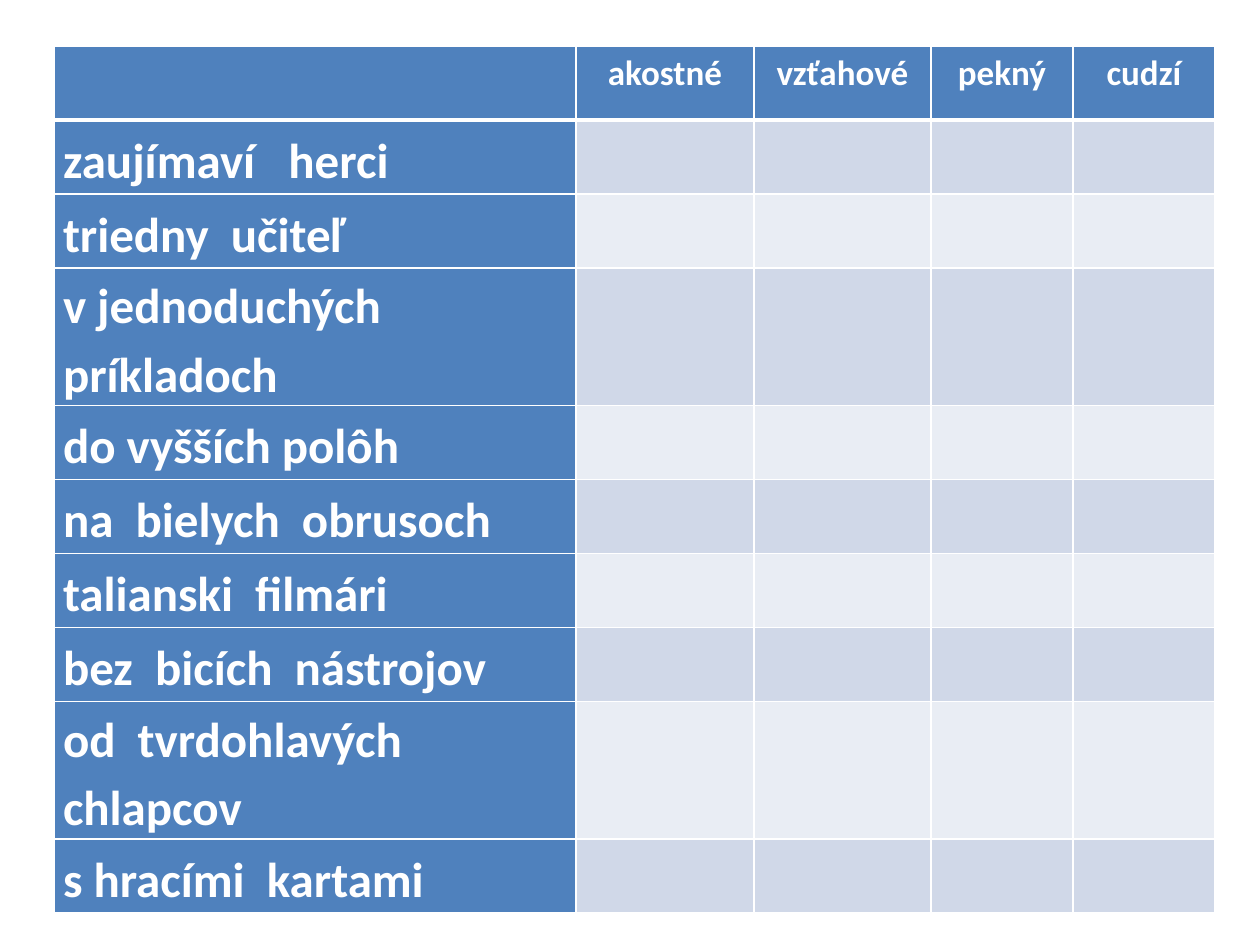
from lxml import etree
from pptx import Presentation
from pptx import util as u
from pptx.dml.color import RGBColor
from pptx.enum import text
from pptx.oxml.ns import qn

PX = 914400 // 126
LEFT, TOP = 54, 46
COLUMN_WIDTHS = [522, 178, 177, 142, 142]
ROW_HEIGHT, TALL_ROW_HEIGHT = 74, 135
SIDE_MARGIN = 9

WHITE, BLUE = "FFFFFF", "4F81BD"
BANDS = ["D0D8E8", "E9EDF4"]
FONT = "Calibri"

CATEGORIES = ["akostné", "vzťahové", "pekný", "cudzí"]
PHRASES = [
    "zaujímaví   herci",
    "triedny  učiteľ",
    "v jednoduchých  príkladoch",
    "do vyšších polôh",
    "na  bielych  obrusoch",
    "talianski  filmári",
    "bez  bicích  nástrojov",
    "od  tvrdohlavých  chlapcov",
    "s hracími  kartami",
]
TWO_LINE_PHRASES = {PHRASES[2], PHRASES[7]}


def px(n):
    return u.Emu(n * PX)


def rgb(color):
    return RGBColor.from_string(color)


def set_borders(cell, top=1, bottom=1):
    """Draw white borders, with widths in points; call before the fill is set."""
    tc_pr = cell._tc.get_or_add_tcPr()
    for side, width in (("L", 1), ("R", 1), ("T", top), ("B", bottom)):
        ln = etree.SubElement(tc_pr, qn(f"a:ln{side}"), w=str(u.Pt(width)))
        fill = etree.SubElement(ln, qn("a:solidFill"))
        etree.SubElement(fill, qn("a:srgbClr"), val=WHITE)


def fill_cell(cell, color):
    cell.fill.solid()
    cell.fill.fore_color.rgb = rgb(color)


def write_cell(cell, words, size, align, anchor):
    cell.margin_left = cell.margin_right = px(SIDE_MARGIN)
    cell.margin_top = cell.margin_bottom = 0
    cell.vertical_anchor = anchor
    p = cell.text_frame.paragraphs[0]
    p.alignment = align
    p.line_spacing = 1.15
    r = p.add_run()
    r.text = words
    r.font.name = FONT
    r.font.size = u.Pt(size)
    r.font.bold = True
    r.font.color.rgb = rgb(WHITE)


def add_grid(s):
    """Add the empty table, with its column widths and row heights."""
    heights = [ROW_HEIGHT] + [
        TALL_ROW_HEIGHT if phrase in TWO_LINE_PHRASES else ROW_HEIGHT
        for phrase in PHRASES
    ]
    table = s.shapes.add_table(
        len(heights), len(COLUMN_WIDTHS), px(LEFT), px(TOP),
        px(sum(COLUMN_WIDTHS)), px(sum(heights))).table
    table.first_col = True
    for column, width in zip(table.columns, COLUMN_WIDTHS):
        column.width = px(width)
    for row, height in zip(table.rows, heights):
        row.height = px(height)
    return table


def style_grid(table):
    for i, row in enumerate(table.rows):
        for j, cell in enumerate(row.cells):
            set_borders(cell, top=3 if i == 1 else 1, bottom=3 if i == 0 else 1)
            is_heading = i == 0 or j == 0
            fill_cell(cell, BLUE if is_heading else BANDS[(i - 1) % 2])


def write_headings(table):
    for j, category in enumerate(CATEGORIES, 1):
        write_cell(table.cell(0, j), category, 20,
                   text.PP_ALIGN.CENTER, text.MSO_ANCHOR.TOP)
    for i, phrase in enumerate(PHRASES, 1):
        write_cell(table.cell(i, 0), phrase, 28,
                   text.PP_ALIGN.LEFT, text.MSO_ANCHOR.MIDDLE)


def main():
    prs = Presentation()
    prs.slide_width, prs.slide_height = u.Inches(10), u.Inches(7.5)
    s = prs.slides.add_slide(prs.slide_layouts[6])
    table = add_grid(s)
    style_grid(table)
    write_headings(table)
    prs.save("out.pptx")


if __name__ == "__main__":
    main()
